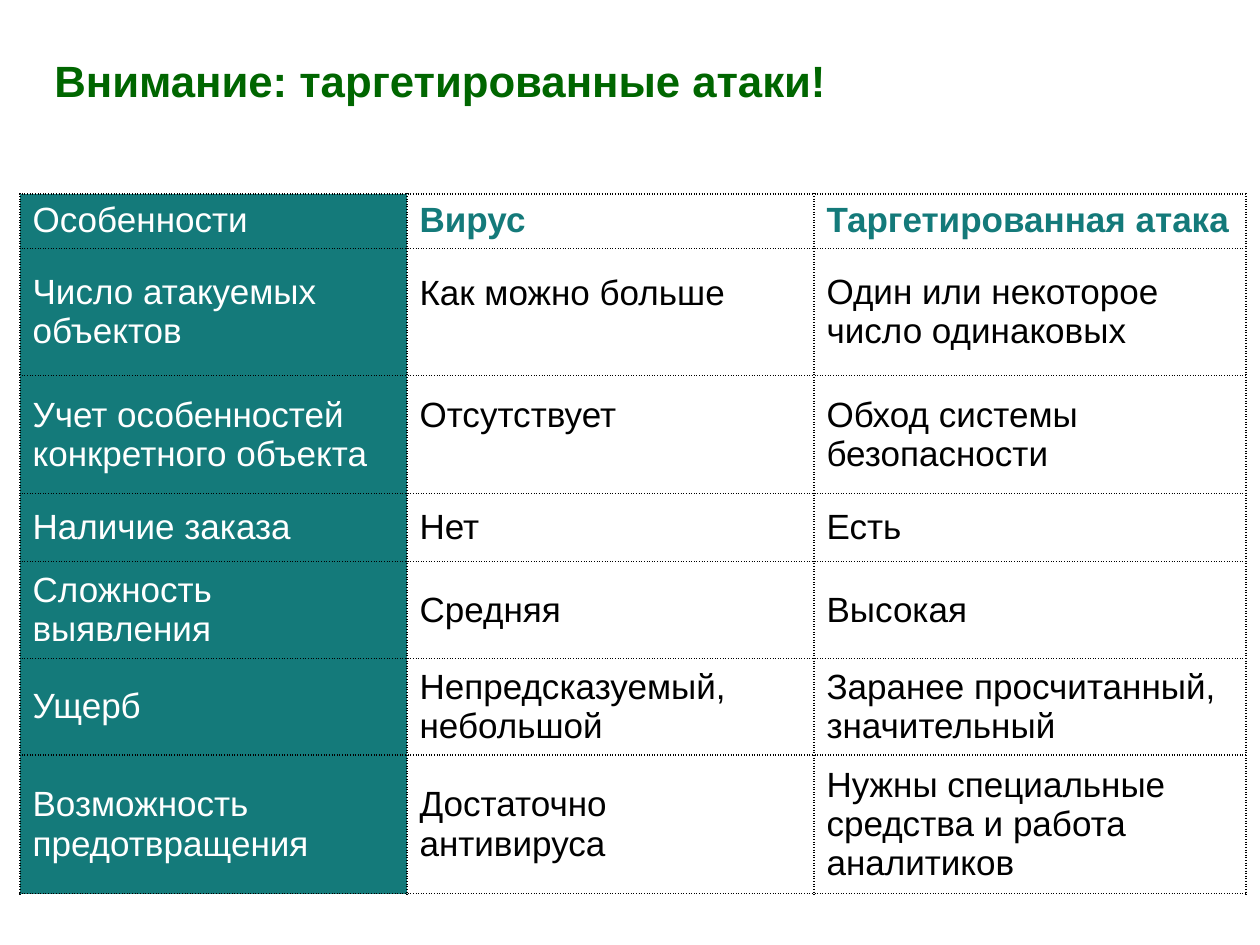
import pptx
import pptx.dml.color
import pptx.enum.text
import pptx.oxml
import pptx.oxml.ns
import pptx.util

PX = 914400 // 126
COLORS = {"title": "006600", "teal": "147A7A", "white": "FFFFFF", "black": "000000"}
COLUMN_WIDTHS = [387, 407, 432]
ROW_HEIGHTS = [52, 127, 118, 68, 91, 91, 137]
ROWS = [
    ["Особенности", "Вирус", "Таргетированная атака"],
    ["Число атакуемых объектов", "Как можно больше", "Один или некоторое число одинаковых"],
    ["Учет особенностей конкретного объекта", "Отсутствует", "Обход системы безопасности"],
    ["Наличие заказа", "Нет", "Есть"],
    ["Сложность выявления", "Средняя", "Высокая"],
    ["Ущерб", "Непредсказуемый, небольшой", "Заранее просчитанный, значительный"],
    ["Возможность предотвращения", "Достаточно антивируса",
     "Нужны специальные средства и работа аналитиков"],
]
RAISED_CELLS = [(1, 1), (2, 1)]  # level with the first line of their neighbours
MIDDLE = pptx.enum.text.MSO_ANCHOR.MIDDLE


def write_text(text_frame, text, size, color, bold):
    paragraph = text_frame.paragraphs[0]
    run = paragraph.add_run()
    run.text = text
    font_format = {"name": "Arial", "size": pptx.util.Pt(size), "bold": bold}
    for name, value in font_format.items():
        setattr(run.font, name, value)
    run.font.color.rgb = pptx.dml.color.RGBColor.from_string(COLORS[color])


def add_dotted_borders(cell):
    """Put the border lines ahead of the fill, as the schema requires."""
    properties = cell._tc.get_or_add_tcPr()
    for position, side in enumerate(["lnL", "lnR", "lnT", "lnB"]):
        line = pptx.oxml.parse_xml(
            f'<a:{side} {pptx.oxml.ns.nsdecls("a")} w="12700"><a:solidFill>'
            f'<a:srgbClr val="{COLORS["black"]}"/></a:solidFill>'
            f'<a:prstDash val="sysDot"/></a:{side}>')
        properties.insert(position, line)


presentation = pptx.Presentation()
presentation.slide_width = pptx.util.Inches(10)
presentation.slide_height = pptx.util.Inches(7.5)
slide = presentation.slides.add_slide(presentation.slide_layouts[6])

title = slide.shapes.add_textbox(42 * PX, 44 * PX, 798 * PX, 72 * PX)
title.text_frame.vertical_anchor = MIDDLE
title.text_frame.word_wrap = False
write_text(title.text_frame, "Внимание: таргетированные атаки!", 25, "title", True)

table = slide.shapes.add_table(
    len(ROWS), len(COLUMN_WIDTHS), 20 * PX, 194 * PX,
    sum(COLUMN_WIDTHS) * PX, sum(ROW_HEIGHTS) * PX).table
table.first_row = False
table.horz_banding = False
for column, width in zip(table.columns, COLUMN_WIDTHS):
    column.width = width * PX
for row, height in zip(table.rows, ROW_HEIGHTS):
    row.height = height * PX

for row_index, texts in enumerate(ROWS):
    for column_index, text in enumerate(texts):
        cell = table.cell(row_index, column_index)
        is_heading = row_index == 0 and column_index > 0
        if column_index == 0:
            color = "white"
            cell.fill.solid()
            cell.fill.fore_color.rgb = pptx.dml.color.RGBColor.from_string(COLORS["teal"])
        else:
            color = "teal" if is_heading else "black"
            cell.fill.background()
        if row_index > 0:
            cell.vertical_anchor = MIDDLE
        if (row_index, column_index) in RAISED_CELLS:
            cell.margin_bottom = 45 * PX
        add_dotted_borders(cell)
        write_text(cell.text_frame, text, 20, color, is_heading)

presentation.save("out.pptx")
